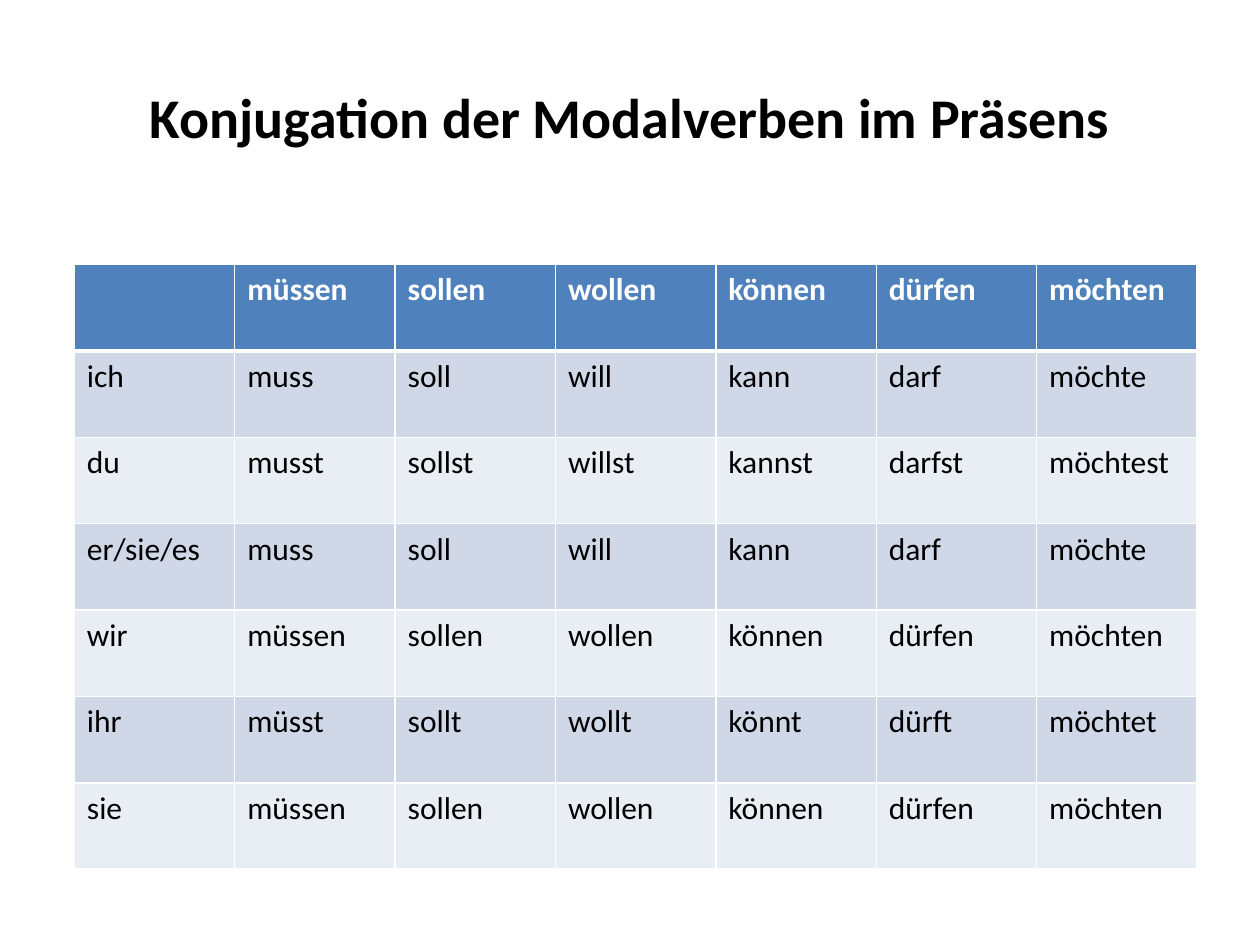
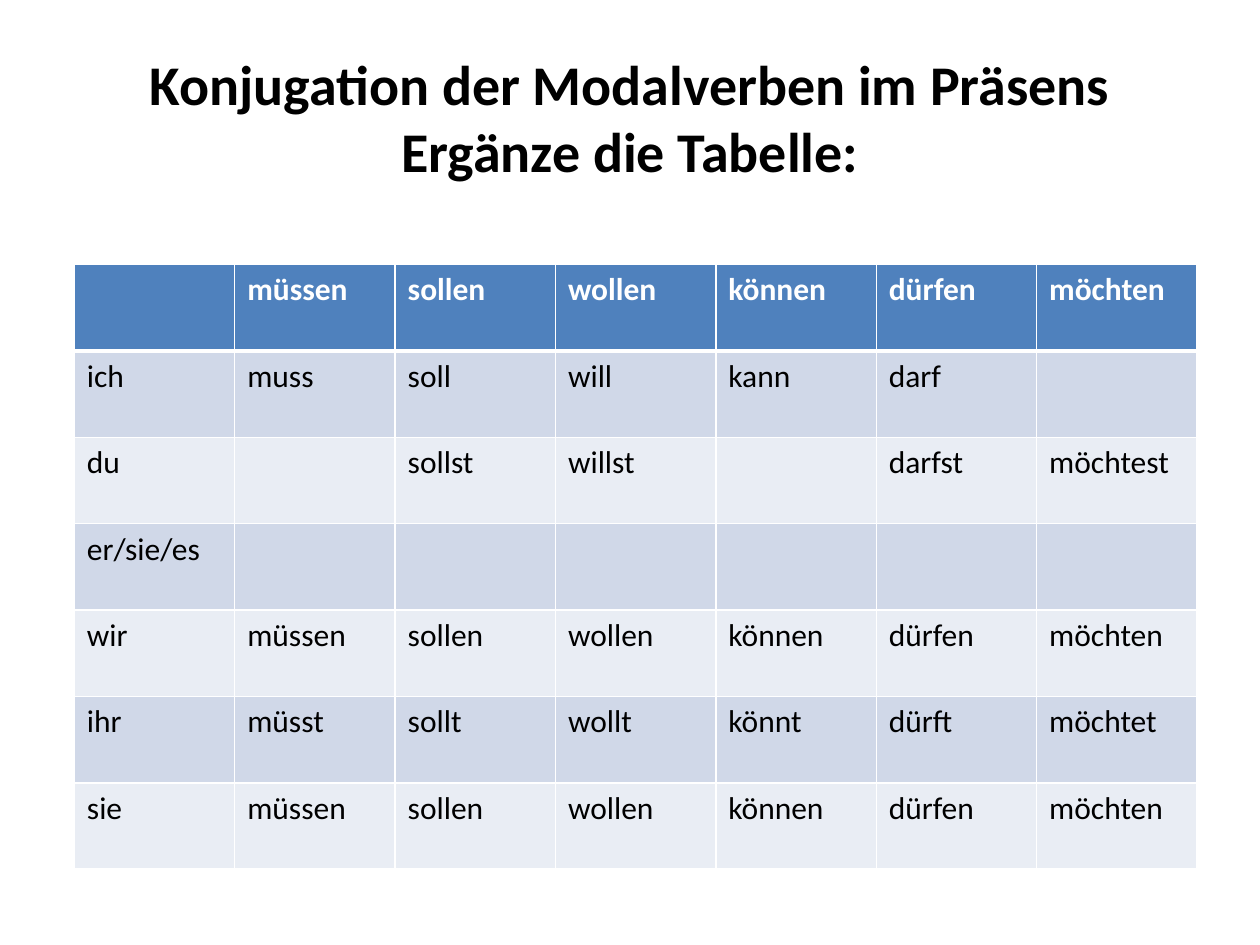
from dataclasses import dataclass

from lxml import etree
from pptx import Presentation
from pptx.dml.color import RGBColor
from pptx.enum.text import MSO_ANCHOR, PP_ALIGN
from pptx.oxml.ns import qn
from pptx.util import Inches, Pt

CENTER = PP_ALIGN.CENTER
MIDDLE = MSO_ANCHOR.MIDDLE
TITLE_ONLY = 5


@dataclass(frozen=True)
class Theme:
    font: str = "Calibri"
    text: str = "000000"
    header_text: str = "FFFFFF"
    header_fill: str = "4F81BD"
    bands: tuple = ("D0D8E8", "E9EDF4")
    border: str = "FFFFFF"
    title_size: int = 32
    table_size: int = 18
    thin: int = 1
    thick: int = 3


THEME = Theme()

CONJUGATION = [
    ["", "müssen", "sollen", "wollen", "können", "dürfen", "möchten"],
    ["ich", "muss", "soll", "will", "kann", "darf", "möchte"],
    ["du", "musst", "sollst", "willst", "kannst", "darfst", "möchtest"],
    ["er/sie/es", "muss", "soll", "will", "kann", "darf", "möchte"],
    ["wir", "müssen", "sollen", "wollen", "können", "dürfen", "möchten"],
    ["ihr", "müsst", "sollt", "wollt", "könnt", "dürft", "möchtet"],
    ["sie", "müssen", "sollen", "wollen", "können", "dürfen", "möchten"],
]
HEADING = "Konjugation der Modalverben im Präsens"

# Cells (row, column) the learner fills in on the exercise slide
GAPS = {(1, 6), (2, 1), (2, 4)} | {(3, column) for column in range(1, 7)}

LESSONS = [
    ([HEADING], set()),
    ([HEADING, "Ergänze die Tabelle:"], GAPS),
]


def add_run(paragraph, text, size, color, bold):
    run = paragraph.add_run()
    run.text = text
    run.font.name = THEME.font
    run.font.size = Pt(size)
    run.font.bold = bold
    run.font.color.rgb = RGBColor.from_string(color)


def add_borders(cell, top, bottom):
    properties = cell._tc.get_or_add_tcPr()
    widths = {"a:lnL": THEME.thin, "a:lnR": THEME.thin, "a:lnT": top, "a:lnB": bottom}
    for side, width in widths.items():
        line = etree.SubElement(properties, qn(side), w=str(Pt(width)))
        fill = etree.SubElement(line, qn("a:solidFill"))
        etree.SubElement(fill, qn("a:srgbClr"), val=THEME.border)


prs = Presentation()
prs.slide_width, prs.slide_height = Inches(10), Inches(7.5)

for title_lines, gaps in LESSONS:
    slide = prs.slides.add_slide(prs.slide_layouts[TITLE_ONLY])

    # Title
    title = slide.shapes.title
    title.left, title.top = Inches(0.5), Inches(0.3)
    title.width, title.height = Inches(9), Inches(1.25)
    title.text_frame.vertical_anchor = MIDDLE
    heading = title.text_frame.paragraphs[0]
    heading.alignment = CENTER
    for number, line in enumerate(title_lines):
        if number:
            heading.add_line_break()
        add_run(heading, line, THEME.title_size, THEME.text, True)

    # Conjugation table
    table = slide.shapes.add_table(
        len(CONJUGATION), len(CONJUGATION[0]),
        Inches(0.59), Inches(2.1), Inches(8.91), Inches(4.8),
    ).table
    for r, forms in enumerate(CONJUGATION):
        is_header = r == 0
        fill = THEME.header_fill if is_header else THEME.bands[(r - 1) % 2]
        color = THEME.header_text if is_header else THEME.text
        top = THEME.thick if r == 1 else THEME.thin
        bottom = THEME.thick if is_header else THEME.thin
        for c, form in enumerate(forms):
            cell = table.cell(r, c)
            add_borders(cell, top, bottom)
            cell.fill.solid()
            cell.fill.fore_color.rgb = RGBColor.from_string(fill)
            if form and (r, c) not in gaps:
                add_run(cell.text_frame.paragraphs[0], form,
                        THEME.table_size, color, is_header)

prs.save("out.pptx")
